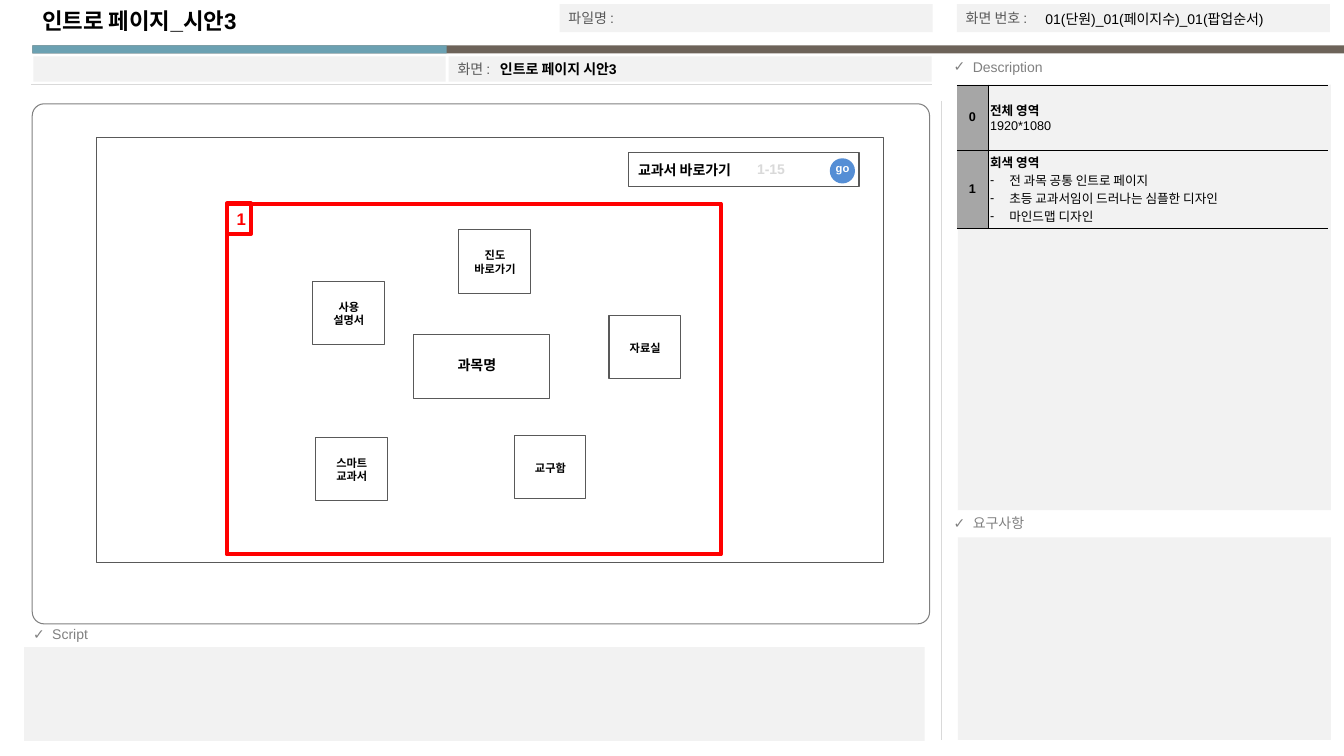
from dataclasses import dataclass

from lxml import etree
from pptx import Presentation
from pptx.dml.color import RGBColor
from pptx.enum.shapes import MSO_CONNECTOR, MSO_SHAPE
from pptx.enum.text import MSO_ANCHOR, PP_ALIGN
from pptx.oxml.ns import qn
from pptx.util import Inches, Pt

RECTANGLE, ROUNDED, OVAL = MSO_SHAPE.RECTANGLE, MSO_SHAPE.ROUNDED_RECTANGLE, MSO_SHAPE.OVAL
STRAIGHT = MSO_CONNECTOR.STRAIGHT
LEFT, CENTER = PP_ALIGN.LEFT, PP_ALIGN.CENTER
TOP, MIDDLE = MSO_ANCHOR.TOP, MSO_ANCHOR.MIDDLE

LATIN_FONT, KOREAN_FONT = "Arial", "Noto Sans CJK KR"
COLORS = {
    "white": "FFFFFF", "black": "000000", "panel": "F2F2F2", "rule": "D9D9D9",
    "heading": "808080", "label": "595959", "index": "A6A6A6", "brown": "6D6359",
    "teal": "6BA1B2", "red": "FF0000", "blue": "558ED5",
}


@dataclass
class Box:
    left: float
    top: float
    width: float
    height: float


@dataclass
class Section:
    heading: str
    heading_box: Box
    panel: Box


@dataclass
class MenuCard:
    left: float
    top: float
    lines: list[str]


@dataclass
class DescriptionRow:
    index: str
    height: float
    title: str
    lines: list[str]
    bullet: str = ""


def color(name: str) -> RGBColor:
    return RGBColor.from_string(COLORS[name])


def write(paragraph, text: str, *, size: float = 10, ink: str = "black", bold: bool = False,
          align: PP_ALIGN = LEFT, bullet: str = "") -> None:
    paragraph.alignment = align
    if bullet:
        properties = paragraph._p.get_or_add_pPr()
        properties.set("marL", str(Inches(0.19)))
        properties.set("indent", str(Inches(-0.19)))
        etree.SubElement(properties, qn("a:buFont")).set("typeface", LATIN_FONT)
        etree.SubElement(properties, qn("a:buChar")).set("char", bullet)
    run = paragraph.add_run()
    run.text = text
    run.font.size, run.font.bold, run.font.name = Pt(size), bold, LATIN_FONT
    run.font.color.rgb = color(ink)
    etree.SubElement(run._r.get_or_add_rPr(), qn("a:ea")).set("typeface", KOREAN_FONT)


def write_lines(frame, lines: list[str], **style) -> None:
    for number, line in enumerate(lines):
        paragraph = frame.add_paragraph() if number else frame.paragraphs[0]
        write(paragraph, line, **style)


def add_text(slide, box: Box, *lines: str, anchor: MSO_ANCHOR = MIDDLE, **style) -> None:
    shape = slide.shapes.add_textbox(Inches(box.left), Inches(box.top),
                                     Inches(box.width), Inches(box.height))
    frame = shape.text_frame
    frame.word_wrap, frame.vertical_anchor = True, anchor
    write_lines(frame, list(lines), **style)


def add_box(slide, box: Box, fill: str = "", line: str = "", weight: float = 0.75,
            kind: MSO_SHAPE = RECTANGLE):
    shape = slide.shapes.add_shape(kind, Inches(box.left), Inches(box.top),
                                   Inches(box.width), Inches(box.height))
    shape.shadow.inherit = False
    if fill:
        shape.fill.solid()
        shape.fill.fore_color.rgb = color(fill)
    else:
        shape.fill.background()
    if line:
        shape.line.color.rgb, shape.line.width = color(line), Pt(weight)
    else:
        shape.line.fill.background()
    return shape


def add_rule(slide, left: float, top: float, right: float, bottom: float) -> None:
    rule = slide.shapes.add_connector(STRAIGHT, Inches(left), Inches(top),
                                      Inches(right), Inches(bottom))
    rule.line.color.rgb, rule.line.width = color("rule"), Pt(0.75)
    etree.SubElement(rule._element.spPr, qn("a:effectLst"))


def set_borders(cell, visible: str) -> None:
    properties = cell._tc.get_or_add_tcPr()
    for position, side in enumerate("LRTB"):
        border = etree.Element(qn(f"a:ln{side}"), w=str(Pt(0.25)))
        if side in visible:
            fill = etree.SubElement(border, qn("a:solidFill"))
            etree.SubElement(fill, qn("a:srgbClr")).set("val", COLORS["black"])
        else:
            etree.SubElement(border, qn("a:noFill"))
        properties.insert(position, border)


def add_description_table(slide, rows: list[DescriptionRow]) -> None:
    height = sum(row.height for row in rows)
    table = slide.shapes.add_table(len(rows), 2, Inches(9.49), Inches(0.84),
                                   Inches(3.68), Inches(height)).table
    table.first_row = table.horz_banding = False
    for column, width in zip(table.columns, (0.31, 3.37)):
        column.width = Inches(width)
    for number, row in enumerate(rows):
        table.rows[number].height = Inches(row.height)
        index_cell, text_cell = table.cell(number, 0), table.cell(number, 1)
        for cell, borders in ((index_cell, "RTB"), (text_cell, "LTB")):
            cell.margin_left = cell.margin_right = Inches(0.02)
            cell.margin_top = cell.margin_bottom = Inches(0.02)
            cell.vertical_anchor = MIDDLE
            cell.fill.background()
            set_borders(cell, borders)
        index_cell.fill.solid()
        index_cell.fill.fore_color.rgb = color("index")
        write_lines(index_cell.text_frame, [row.index], size=9, bold=True, align=CENTER)
        frame = text_cell.text_frame
        write_lines(frame, [row.title], size=9, bold=True)
        for line in row.lines:
            write(frame.add_paragraph(), line, size=9, bullet=row.bullet)


SECTIONS = [
    Section("Description", Box(9.36, 0.53, 3.97, 0.27), Box(9.5, 0.84, 3.7, 4.22)),
    Section("요구사항", Box(9.36, 5.06, 3.97, 0.27), Box(9.5, 5.33, 3.7, 2.01)),
    Section("Script", Box(0.23, 6.16, 3.94, 0.31), Box(0.24, 6.42, 8.93, 0.93)),
]
HEADER_FIELDS = [
    ("", Box(0.33, 0.56, 4.09, 0.25)),
    ("화면 :", Box(4.45, 0.56, 4.79, 0.25)),
    ("파일명 :", Box(5.55, 0.04, 3.7, 0.28)),
    ("화면 번호 :", Box(9.49, 0.04, 3.7, 0.28)),
]
MENU_CARDS = [
    MenuCard(3.1, 2.79, ["사용", "설명서"]),
    MenuCard(3.13, 4.34, ["스마트", "교과서"]),
    MenuCard(5.1, 4.32, ["교구함"]),
    MenuCard(6.04, 3.13, ["자료실"]),
    MenuCard(4.55, 2.28, ["진도", "바로가기"]),
]
DESCRIPTION = [
    DescriptionRow("0", 0.65, "전체 영역", ["1920*1080"]),
    DescriptionRow("1", 0.77, "회색 영역", ["전 과목 공통 인트로 페이지",
                                        "초등 교과서임이 드러나는 심플한 디자인",
                                        "마인드맵 디자인"], "-"),
]


def main() -> None:
    presentation = Presentation()
    presentation.slide_width, presentation.slide_height = Inches(13.33), Inches(7.5)
    slide = presentation.slides.add_slide(presentation.slide_layouts[6])

    # Page frame
    add_box(slide, Box(0.32, 0.45, 13.01, 0.08), "brown")
    add_box(slide, Box(0.32, 0.45, 4.11, 0.08), "teal")
    add_rule(slide, 9.34, 1, 9.34, 7.34)
    for section in SECTIONS:
        add_text(slide, section.heading_box, section.heading, anchor=TOP, ink="heading", bullet="✓")
        add_box(slide, section.panel, "panel")

    # Header fields
    for label, box in HEADER_FIELDS:
        add_box(slide, box, "panel")
        if label:
            add_text(slide, Box(box.left - 0.01, box.top, 3.66, box.height), label, ink="label")
    add_rule(slide, 0.31, 0.84, 9.24, 0.84)
    add_text(slide, Box(0.32, 0.02, 5.2, 0.37), "인트로 페이지_시안3", size=16, bold=True)
    add_text(slide, Box(4.86, 0.56, 4.38, 0.25), "인트로 페이지 시안3", bold=True)
    add_text(slide, Box(10.27, 0.06, 2.9, 0.25), "01(단원)_01(페이지수)_01(팝업순서)")

    # Screen wireframe
    screen = add_box(slide, Box(0.32, 1.03, 8.9, 5.16), "white", "heading", kind=ROUNDED)
    screen.adjustments[0] = 0.023
    add_box(slide, Box(0.96, 1.36, 7.8, 4.22), "white", "label")
    add_box(slide, Box(4.1, 3.32, 1.35, 0.63), "white", "label")
    add_text(slide, Box(4.44, 3.49, 0.68, 0.27), "과목명", bold=True)
    for card in MENU_CARDS:
        add_box(slide, Box(card.left, card.top, 0.71, 0.63), "white", "label")
        add_text(slide, Box(card.left + 0.02, card.top + 0.09, 0.68, 0.46), *card.lines,
                 size=8, bold=True, align=CENTER)

    # Description table
    add_description_table(slide, DESCRIPTION)

    # Numbered area
    badge = Box(2.25, 2.02, 0.24, 0.3)
    add_box(slide, badge, "white", "red", 3)
    add_text(slide, badge, "1", size=12, ink="red", bold=True, align=CENTER)
    add_box(slide, Box(2.25, 2.02, 4.9, 3.48), line="red", weight=3)

    # Textbook shortcut
    add_box(slide, Box(6.23, 1.51, 2.29, 0.34), "white", "label")
    add_text(slide, Box(6.23, 1.55, 1.26, 0.27), "교과서 바로가기", bold=True)
    add_text(slide, Box(7.41, 1.58, 0.81, 0.19), "1-15", ink="rule", bold=True)
    add_box(slide, Box(8.23, 1.57, 0.25, 0.25), "blue", kind=OVAL)
    add_text(slide, Box(8.19, 1.56, 0.39, 0.22), "go", size=8, ink="white", bold=True)

    presentation.save("out.pptx")


if __name__ == "__main__":
    main()
